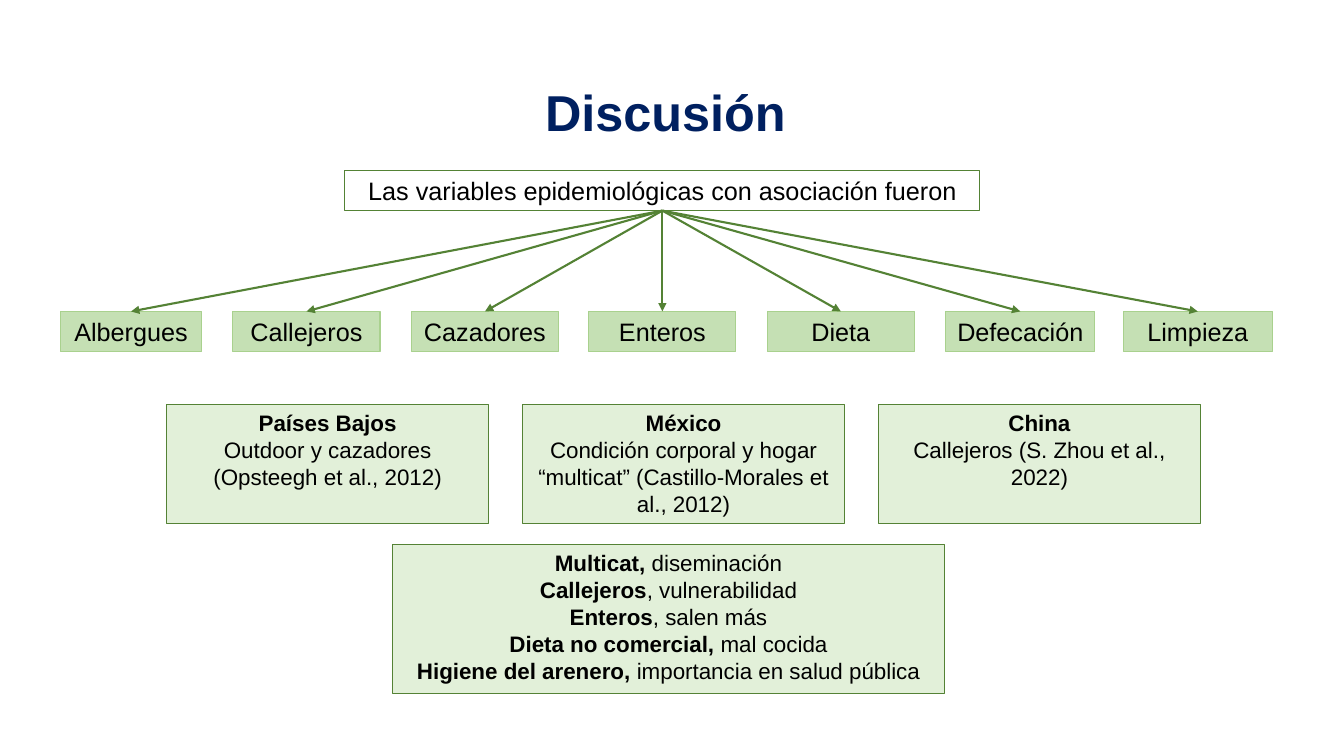
from lxml import etree
from pptx import Presentation
from pptx.dml.color import RGBColor
from pptx.enum.shapes import MSO_CONNECTOR, MSO_SHAPE
from pptx.enum.text import MSO_ANCHOR, MSO_AUTO_SIZE, PP_ALIGN
from pptx.oxml.ns import qn
from pptx.util import Inches, Pt

RECTANGLE = MSO_SHAPE.RECTANGLE
STRAIGHT = MSO_CONNECTOR.STRAIGHT
TOP, MIDDLE = MSO_ANCHOR.TOP, MSO_ANCHOR.MIDDLE
CENTER = PP_ALIGN.CENTER
GROW, FIXED = MSO_AUTO_SIZE.SHAPE_TO_FIT_TEXT, MSO_AUTO_SIZE.NONE
TITLE_ONLY = 5
BOTTOM_SITE, TOP_SITE = 2, 0

NAVY, BLACK = "002060", "000000"
DARK_GREEN, MID_GREEN = "548235", "A9D18E"
LABEL_GREEN, PALE_GREEN = "C5E0B4", "E2F0D9"

VARIABLES = [
    ("Albergues", 0.6, 1.4),
    ("Callejeros", 2.31, 1.46),
    ("Cazadores", 4.08, 1.46),
    ("Enteros", 5.84, 1.46),
    ("Dieta", 7.61, 1.46),
    ("Defecación", 9.38, 1.48),
    ("Limpieza", 11.14, 1.48),
]
COUNTRIES = [
    ("Países Bajos", "Outdoor y cazadores (Opsteegh et al., 2012)"),
    ("México", "Condición corporal y hogar “multicat” (Castillo-Morales et al., 2012)"),
    ("China", "Callejeros (S. Zhou et al., 2022)"),
]
EXPLANATIONS = [
    [("Multicat, ", True), ("diseminación", False)],
    [("Callejeros", True), (", vulnerabilidad", False)],
    [("Enteros", True), (", salen más", False)],
    [("Dieta no comercial,", True), (" mal cocida", False)],
    [("Higiene del arenero,", True), (" importancia en salud pública", False)],
]


def color(value):
    """Return the colour of a hex string."""
    return RGBColor.from_string(value)


class SlideBuilder:
    """Draws styled elements on one slide."""

    def __init__(self, slide, font="Arial"):
        """Keep the slide and its font."""
        self.slide = slide
        self.font = font

    def format_run(self, run, size, value, bold):
        """Apply font, size, colour and weight to a run."""
        run.font.name = self.font
        run.font.size = Pt(size)
        run.font.color.rgb = color(value)
        run.font.bold = bold

    def title(self, text, left, top, width, height):
        """Place and format the title placeholder."""
        shape = self.slide.shapes.title
        shape.left, shape.top = Inches(left), Inches(top)
        shape.width, shape.height = Inches(width), Inches(height)
        frame = shape.text_frame
        frame.text = text
        frame.auto_size = FIXED
        frame.vertical_anchor = MIDDLE
        paragraph = frame.paragraphs[0]
        paragraph.alignment = CENTER
        paragraph.line_spacing = 0.9
        self.format_run(paragraph.runs[0], 36, NAVY, True)

    def box(self, lines, left, top, width, height, size, fill=None,
            line=DARK_GREEN, anchor=TOP):
        """Draw a rectangle whose lines are lists of (text, bold) pairs."""
        shape = self.slide.shapes.add_shape(
            RECTANGLE, Inches(left), Inches(top), Inches(width), Inches(height))
        shape.shadow.inherit = False
        if fill:
            shape.fill.solid()
            shape.fill.fore_color.rgb = color(fill)
        else:
            shape.fill.background()
        shape.line.color.rgb = color(line)
        shape.line.width = Pt(0.75)
        frame = shape.text_frame
        frame.word_wrap = True
        frame.auto_size = GROW
        frame.vertical_anchor = anchor
        for index, pieces in enumerate(lines):
            paragraph = frame.add_paragraph() if index else frame.paragraphs[0]
            paragraph.alignment = CENTER
            for text, bold in pieces:
                run = paragraph.add_run()
                run.text = text
                self.format_run(run, size, BLACK, bold)
        return shape

    def arrow(self, source, target):
        """Join the bottom of one box to the top of another."""
        connector = self.slide.shapes.add_connector(STRAIGHT, 0, 0, 0, 0)
        connector.begin_connect(source, BOTTOM_SITE)
        connector.end_connect(target, TOP_SITE)
        connector.line.color.rgb = color(DARK_GREEN)
        connector.line.width = Pt(1.5)
        properties = connector._element.spPr
        outline = properties.find(qn("a:ln"))
        etree.SubElement(outline, qn("a:tailEnd"), type="triangle")
        etree.SubElement(properties, qn("a:effectLst"))


def main():
    """Build and save the presentation."""
    presentation = Presentation()
    presentation.slide_width = Inches(13.33)
    presentation.slide_height = Inches(7.5)
    slide = presentation.slides.add_slide(presentation.slide_layouts[TITLE_ONLY])
    builder = SlideBuilder(slide)

    builder.title("Discusión ", 0.36, 0.66, 12.62, 0.96)
    heading = builder.box(
        [[("Las variables epidemiológicas con asociación fueron", False)]],
        3.42, 1.69, 6.3, 0.4, 18)
    labels = [
        builder.box([[(name, False)]], left, 3.09, width, 0.4, 18,
                    LABEL_GREEN, MID_GREEN, MIDDLE)
        for name, left, width in VARIABLES
    ]
    for label in labels:
        builder.arrow(heading, label)

    for index, (country, finding) in enumerate(COUNTRIES):
        builder.box([[(country, True)], [(finding, False)]],
                    1.65 + 3.53 * index, 4.01, 3.2, 1.18, 16, PALE_GREEN)
    builder.box(EXPLANATIONS, 3.89, 5.4, 5.48, 1.48, 16, PALE_GREEN)

    presentation.save("out.pptx")


if __name__ == "__main__":
    main()
